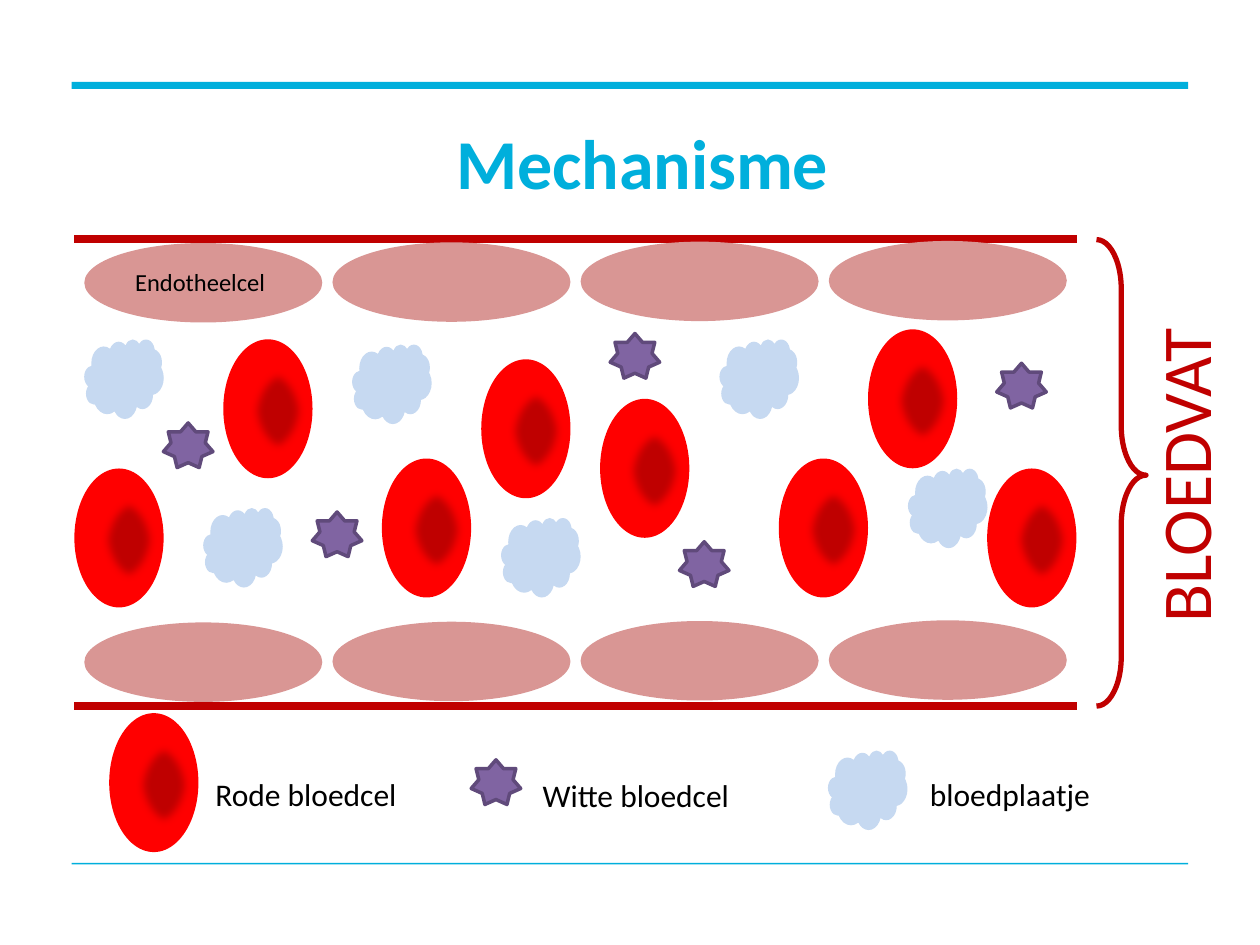
from lxml import etree
from pptx import Presentation
from pptx.dml.color import RGBColor
from pptx.enum.shapes import MSO_CONNECTOR, MSO_SHAPE
from pptx.enum.text import MSO_ANCHOR, PP_ALIGN
from pptx.oxml.ns import qn
from pptx.util import Pt

RECTANGLE, ELLIPSE = MSO_SHAPE.RECTANGLE, MSO_SHAPE.OVAL
CLOUD, STAR, BRACE = MSO_SHAPE.CLOUD, MSO_SHAPE.STAR_7_POINT, MSO_SHAPE.RIGHT_BRACE
STRAIGHT = MSO_CONNECTOR.STRAIGHT
LEFT, CENTER = PP_ALIGN.LEFT, PP_ALIGN.CENTER
TOP, MIDDLE = MSO_ANCHOR.TOP, MSO_ANCHOR.MIDDLE

COLORS = {
    "accent": "00AFDC", "vessel": "C00000", "endothelium": "D99694",
    "red_cell": "FF0000", "nucleus": "C00000", "platelet": "C6D9F1",
    "white_cell": "8064A2", "white_cell_edge": "604A7B", "text": "000000",
}

ENDOTHELIUM_ROWS = [138.9, 355.7]
RED_CELLS = [(42.5, 267.7), (127.6, 193.9), (218.2, 262), (275, 205.3),
             (342.9, 227.9), (445, 262), (496, 188.2), (564.1, 267.7)]
PLATELETS = [(201.3, 196.8), (116.2, 290.2), (48.2, 193.9), (286.4, 295.9),
             (411.2, 193.9), (518.9, 267.7)]
WHITE_CELLS = [(93.4, 241.7), (348.7, 190.6), (178.5, 292.6), (388.3, 309.6), (569.6, 207.6)]


class SlideBuilder:
    font = "Calibri"

    def __init__(self, slide):
        self.slide = slide

    def color(self, name):
        return RGBColor.from_string(COLORS[name])

    def shape(self, kind, x, y, w, h, fill=None, line=None, line_width=2):
        shape = self.slide.shapes.add_shape(kind, Pt(x), Pt(y), Pt(w), Pt(h))
        shape.shadow.inherit = False
        if fill:
            shape.fill.solid()
            shape.fill.fore_color.rgb = self.color(fill)
        else:
            shape.fill.background()
        if line:
            shape.line.color.rgb = self.color(line)
            shape.line.width = Pt(line_width)
        else:
            shape.line.fill.background()
        return shape

    def wall(self, x1, x2, y):
        wall = self.slide.shapes.add_connector(STRAIGHT, Pt(x1), Pt(y), Pt(x2), Pt(y))
        wall.line.color.rgb = self.color("vessel")
        wall.line.width = Pt(4.5)
        etree.SubElement(wall._element.spPr, qn("a:effectLst"))

    def text(self, words, x, y, w, h, size, color="text", align=LEFT,
             bold=False, anchor=TOP, margin=None, upward=False):
        box = self.slide.shapes.add_textbox(Pt(x), Pt(y), Pt(w), Pt(h))
        frame = box.text_frame
        frame.word_wrap = True
        frame.vertical_anchor = anchor
        if margin is not None:
            frame.margin_left = frame.margin_right = Pt(margin)
            frame.margin_top = frame.margin_bottom = Pt(margin)
        if upward:
            frame._txBody.bodyPr.set("vert", "vert270")
        paragraph = frame.paragraphs[0]
        paragraph.alignment = align
        run = paragraph.add_run()
        run.text = words
        run.font.name = self.font
        run.font.size = Pt(size)
        run.font.bold = bold
        run.font.color.rgb = self.color(color)

    def red_cell(self, x, y):
        """Draw a red cell with a soft-edged dark centre."""
        self.shape(ELLIPSE, x, y, 51, 79.4, "red_cell")
        nucleus = self.shape(ELLIPSE, x + 14.2, y + 15.6, 34, 51, "nucleus")
        effects = nucleus._element.spPr.find(qn("a:effectLst"))
        etree.SubElement(effects, qn("a:softEdge"), rad=str(Pt(5)))

    def white_cell(self, x, y):
        self.shape(STAR, x, y, 28.3, 25.5, "white_cell", "white_cell_edge")

    def platelet(self, x, y):
        self.shape(CLOUD, x, y, 45.4, 45.4, "platelet")


def main():
    presentation = Presentation()
    presentation.slide_width, presentation.slide_height = Pt(720), Pt(540)
    slide = presentation.slides.add_slide(presentation.slide_layouts[6])
    builder = SlideBuilder(slide)

    for y, thickness in [(46.8, 4), (493, 1)]:
        builder.shape(RECTANGLE, 41, y, 638, thickness, "accent")
    builder.text("Mechanisme", 48, 71.3, 638, 41.8, 40, "accent", CENTER,
                 bold=True, anchor=MIDDLE, margin=0)

    for y in (136.4, 403.6):
        builder.wall(42.5, 615.2, y)
    for top in ENDOTHELIUM_ROWS:
        for column in range(4):
            builder.shape(ELLIPSE, 48.2 + 141.8 * column, top - 0.4 * column,
                          136, 45.4, "endothelium")
    builder.text("Endotheelcel", 66.2, 149, 96.5, 24.5, 14, align=CENTER)

    brace = builder.shape(BRACE, 626.6, 136.9, 28.3, 266.6, line="vessel", line_width=3)
    brace.adjustments[0] = 0.996
    brace.adjustments[1] = 0.505
    builder.text("BLOEDVAT", 648.7, 177.1, 63.4, 188.6, 40, "vessel", CENTER, upward=True)

    for draw, places in [(builder.platelet, PLATELETS), (builder.red_cell, RED_CELLS),
                         (builder.white_cell, WHITE_CELLS)]:
        for x, y in places:
            draw(x, y)

    legend = [
        (builder.red_cell, 62.4, 407.5, "Rode bloedcel", 116, 439.2),
        (builder.white_cell, 269.3, 434.2, "Witte bloedcel", 303, 439.9),
        (builder.platelet, 473.2, 428.8, "bloedplaatje", 524.3, 439.2),
    ]
    for draw, x, y, label, label_x, label_y in legend:
        draw(x, y)
        builder.text(label, label_x, label_y, 142, 29, 18)

    presentation.save("out.pptx")


if __name__ == "__main__":
    main()
